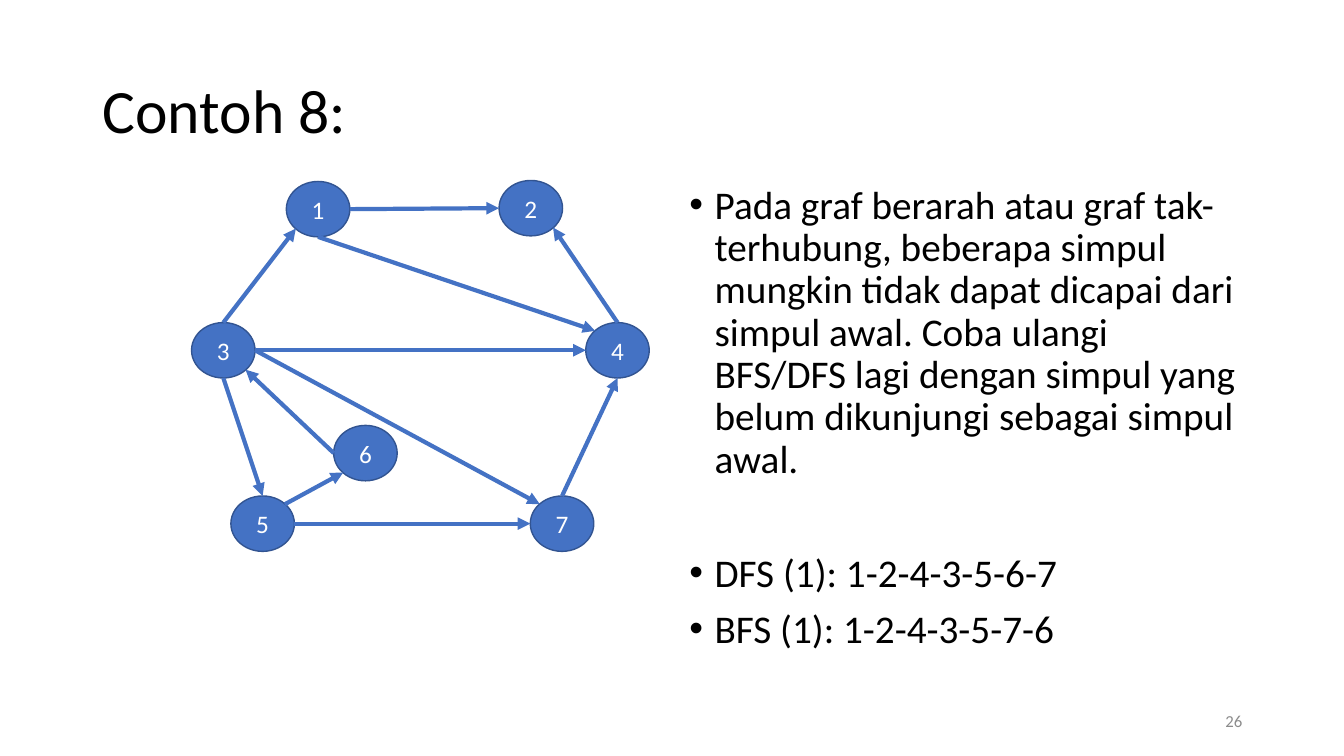
from lxml import etree
from pptx import Presentation
from pptx.dml.color import RGBColor
from pptx.enum import shapes, text
from pptx.oxml import ns
from pptx.util import Inches, Pt

FONT = "Calibri"
BLACK = RGBColor(0x00, 0x00, 0x00)
WHITE = RGBColor(0xFF, 0xFF, 0xFF)
GRAY = RGBColor(0x8C, 0x8C, 0x8C)
BLUE = RGBColor(0x44, 0x72, 0xC4)
DARK_BLUE = RGBColor(0x32, 0x54, 0x91)

NODE_WIDTH, NODE_HEIGHT = 0.63, 0.55
# Left and top of each node inside the graph box
NODES = {
    "1": (0.94, 0.01), "2": (3.05, 0), "3": (0, 1.41), "4": (3.91, 1.41),
    "5": (0.39, 3.13), "6": (1.41, 2.43), "7": (3.36, 3.13),
}
# Where an arrow touches a node, as shares of the node's width and height
NEAR, FAR = 0.15, 0.85
SITES = {
    "top": (0.5, 0), "bottom": (0.5, 1), "left": (0, 0.5), "right": (1, 0.5),
    "top left": (NEAR, NEAR), "top right": (FAR, NEAR),
    "bottom left": (NEAR, FAR), "bottom right": (FAR, FAR),
}
EDGES = [
    ("1", "right", "2", "left"),
    ("3", "top", "1", "bottom left"),
    ("3", "right", "4", "left"),
    ("1", "bottom", "4", "top left"),
    ("4", "top", "2", "bottom right"),
    ("3", "bottom", "5", "top"),
    ("5", "top right", "6", "bottom left"),
    ("6", "left", "3", "bottom right"),
    ("5", "right", "7", "left"),
    ("3", "right", "7", "top left"),
    ("7", "top", "4", "bottom"),
]
# Each point with the space before it
POINTS = [
    ("Pada graf berarah atau graf tak-terhubung, beberapa simpul mungkin tidak "
     "dapat dicapai dari simpul awal. Coba ulangi BFS/DFS lagi dengan simpul yang "
     "belum dikunjungi sebagai simpul awal.", 0),
    ("DFS (1): 1-2-4-3-5-6-7", 51),
    ("BFS (1): 1-2-4-3-5-7-6", 10),
]


def style(para, size, color, align=text.PP_ALIGN.LEFT):
    para.alignment = align
    for span in para.runs:
        span.font.name = FONT
        span.font.size = Pt(size)
        span.font.color.rgb = color


def add_frame(page, left, top, width, height, anchor=text.MSO_ANCHOR.MIDDLE):
    box = page.shapes.add_textbox(*map(Inches, (left, top, width, height)))
    box.text_frame.word_wrap = True
    box.text_frame.vertical_anchor = anchor
    return box.text_frame


def add_title(page, *area):
    frame = add_frame(page, *area)
    frame.text = "Contoh 8:"
    frame.paragraphs[0].line_spacing = 0.9
    style(frame.paragraphs[0], 44, BLACK)


def add_page_number(page, *area):
    frame = add_frame(page, *area)
    frame.text = "26"
    style(frame.paragraphs[0], 12, GRAY, text.PP_ALIGN.RIGHT)


def add_points(page, *area):
    frame = add_frame(page, *area, anchor=text.MSO_ANCHOR.TOP)
    frame.text = "\n".join(wording for wording, _ in POINTS)
    for para, (_, space) in zip(frame.paragraphs, POINTS):
        para.line_spacing = 0.9
        para.space_before = Pt(space)
        properties = para._p.get_or_add_pPr()
        properties.set("marL", str(Inches(0.25)))
        properties.set("indent", str(-Inches(0.25)))
        etree.SubElement(properties, ns.qn("a:buFont"), typeface="Arial")
        etree.SubElement(properties, ns.qn("a:buChar"), char="•")
        style(para, 28, BLACK)


def add_node(page, label, left, top):
    node = page.shapes.add_shape(
        shapes.MSO_SHAPE.OVAL, Inches(left), Inches(top),
        Inches(NODE_WIDTH), Inches(NODE_HEIGHT))
    node.shadow.inherit = False
    node.fill.solid()
    node.fill.fore_color.rgb = BLUE
    node.line.color.rgb = DARK_BLUE
    node.line.width = Pt(1)
    node.text_frame.vertical_anchor = text.MSO_ANCHOR.MIDDLE
    node.text_frame.text = label
    style(node.text_frame.paragraphs[0], 18, WHITE, text.PP_ALIGN.CENTER)


def add_arrow(page, start, end):
    arrow = page.shapes.add_connector(
        shapes.MSO_CONNECTOR.STRAIGHT, *map(Inches, start + end))
    arrow.line.color.rgb = BLUE
    arrow.line.width = Pt(3)
    etree.SubElement(arrow.line._get_or_add_ln(), ns.qn("a:tailEnd"), type="triangle")
    etree.SubElement(arrow._element.spPr, ns.qn("a:effectLst"))


def add_graph(page, left, top):
    def touch(label, site):
        (x, y), (across, down) = NODES[label], SITES[site]
        return left + x + across * NODE_WIDTH, top + y + down * NODE_HEIGHT

    for label, (x, y) in NODES.items():
        add_node(page, label, left + x, top + y)
    for source, leaving, target, entering in EDGES:
        add_arrow(page, touch(source, leaving), touch(target, entering))


def main():
    deck = Presentation()
    deck.slide_width, deck.slide_height = Inches(13.33), Inches(7.5)
    page = deck.slides.add_slide(deck.slide_layouts[6])
    add_title(page, 0.92, 0.4, 11.5, 1.45)
    add_points(page, 6.74, 1.79, 5.67, 4.76)
    add_graph(page, 1.9, 1.79)
    add_page_number(page, 9.42, 6.95, 3, 0.4)
    deck.save("out.pptx")


if __name__ == "__main__":
    main()
